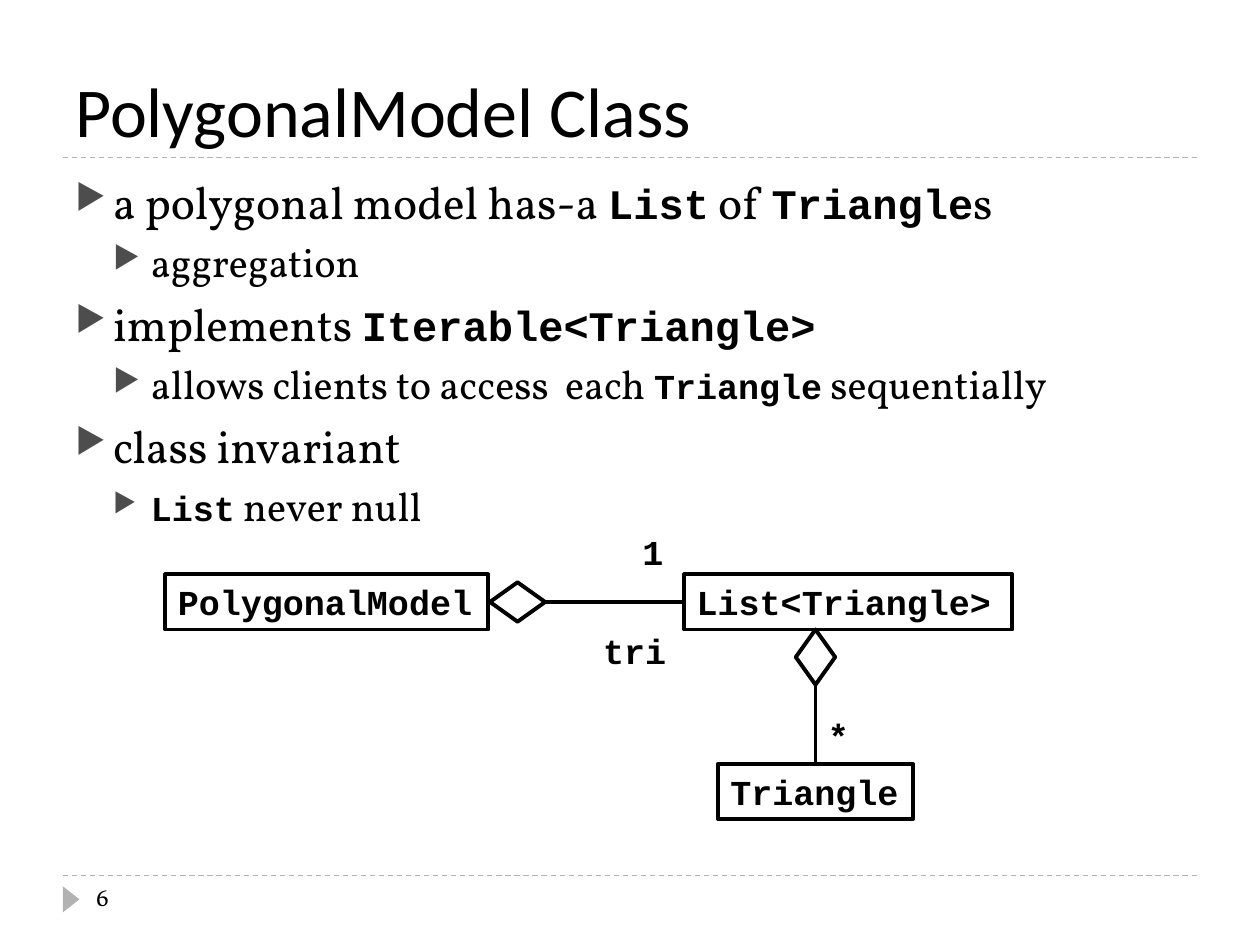
from lxml import etree
from pptx import Presentation
from pptx.dml.color import RGBColor
from pptx.enum import dml, shapes, text
from pptx.oxml import ns
from pptx.util import Pt

BLACK, GREY, DARK = "000000", "B2B2B2", "4D4D4D"
BODY, CODE = "Vollkorn", "Courier New"
LEVELS = [
    dict(size=26, code_size=24, before=6, indent=21.6),
    dict(size=23, code_size=20, before=5, indent=43.2),
]
BULLETS = [
    (0, "a polygonal model has-a `List` of `Triangle`s"),
    (1, "aggregation"),
    (0, "implements `Iterable<Triangle>`"),
    (1, "allows clients to access  each `Triangle` sequentially"),
    (0, "class invariant"),
    (1, "`List` never null"),
]


def rgb(value):
    """Turn a hex string into a colour."""
    return RGBColor.from_string(value)


def add_run(p, words, size=20, font=BODY, bold=False, color=BLACK):
    """Append a formatted run to a paragraph."""
    r = p.add_run()
    r.text = words
    r.font.size, r.font.name, r.font.bold = Pt(size), font, bold
    r.font.color.rgb = rgb(color)


def add_text(slide, box, words, anchor=text.MSO_ANCHOR.TOP, wrap=True, **style):
    """Add a text box holding one paragraph."""
    tf = slide.shapes.add_textbox(*map(Pt, box)).text_frame
    tf.word_wrap, tf.vertical_anchor = wrap, anchor
    add_run(tf.paragraphs[0], words, **style)


def add_line(slide, start, end, color=BLACK, width=2.25, dash=None):
    """Draw a straight line without a shadow."""
    line = slide.shapes.add_connector(
        shapes.MSO_CONNECTOR.STRAIGHT, *map(Pt, start + end))
    line.line.color.rgb, line.line.width = rgb(color), Pt(width)
    line.line.dash_style = dash
    etree.SubElement(line._element.spPr, ns.qn("a:effectLst"))


def add_outline(slide, kind, box, fill=None, line=BLACK, rotation=0):
    """Add a preset shape with an optional fill and outline."""
    sp = slide.shapes.add_shape(kind, *map(Pt, box))
    sp.shadow.inherit = False
    sp.rotation = rotation
    if fill:
        sp.fill.solid()
        sp.fill.fore_color.rgb = rgb(fill)
    else:
        sp.fill.background()
    if line:
        sp.line.color.rgb, sp.line.width = rgb(line), Pt(2.25)
    else:
        sp.line.fill.background()
    return sp


def add_class(slide, box, name):
    """Add a class box with its name."""
    tf = add_outline(slide, shapes.MSO_SHAPE.RECTANGLE, box).text_frame
    tf.word_wrap, tf.vertical_anchor = False, text.MSO_ANCHOR.TOP
    p = tf.paragraphs[0]
    p.alignment = text.PP_ALIGN.LEFT
    add_run(p, name, font=CODE, bold=True)


def add_bullet(p, indent):
    """Give a paragraph a hanging triangle bullet."""
    pPr = p._p.get_or_add_pPr()
    pPr.set("marL", str(Pt(indent)))
    pPr.set("indent", str(Pt(-21.6)))
    color = etree.SubElement(pPr, ns.qn("a:buClr"))
    etree.SubElement(color, ns.qn("a:srgbClr"), val=DARK)
    etree.SubElement(pPr, ns.qn("a:buSzPct"), val="76000")
    etree.SubElement(pPr, ns.qn("a:buChar"), char="▶")


def title_region(slide, box, words):
    """Place the title above its dashed rule."""
    x, y, w, h = box
    add_line(slide, (x, y + h), (x + w, y + h), GREY, 0.75, dml.MSO_LINE.DASH)
    add_text(slide, box, words, text.MSO_ANCHOR.BOTTOM, size=40, font="Calibri")


def bullet_region(slide, box, items):
    """Place the two-level list, with code between backticks."""
    tf = slide.shapes.add_textbox(*map(Pt, box)).text_frame
    tf.word_wrap = True
    for i, (depth, words) in enumerate(items):
        p = tf.add_paragraph() if i else tf.paragraphs[0]
        level = LEVELS[depth]
        p.level, p.space_before = depth, Pt(level["before"])
        add_bullet(p, level["indent"])
        for j, part in enumerate(words.split("`")):
            if part and j % 2:
                add_run(p, part, level["code_size"], CODE, True)
            elif part:
                add_run(p, part, level["size"])


def diagram_region(slide, box):
    """Place the class diagram with its two aggregations."""
    x, y, w, h = box
    box_h, long, short = 31.5, 31.5, 22.5
    top = y + 28.5
    mid = top + box_h / 2
    model_w, list_w, triangle_w = 184.5, 187.5, 111.5
    list_x = x + w - list_w
    axis = list_x + 75
    bottom = y + h - box_h
    joint_x = x + model_w + 1
    joint_y = top + box_h

    add_class(slide, (x, top, model_w, box_h), "PolygonalModel")
    add_class(slide, (list_x, top, list_w, box_h), "List<Triangle>")
    add_class(slide, (axis - triangle_w / 2, bottom, triangle_w, box_h), "Triangle")

    for cx, cy, turn in ((joint_x + long / 2, mid, 0),
                         (axis, joint_y + long / 2, 90)):
        place = (cx - long / 2, cy - short / 2, long, short)
        add_outline(slide, shapes.MSO_SHAPE.DIAMOND, place, rotation=turn)
    add_line(slide, (joint_x + long, mid), (list_x, mid))
    add_line(slide, (axis, joint_y + long), (axis, bottom))

    for left, up, width, words in ((list_x - 31, y, 26.5, "1"),
                                   (list_x - 53.5, y + 56.5, 51, "tri"),
                                   (axis, bottom - box_h, 26.5, "*")):
        add_text(slide, (left, up, width, box_h), words, wrap=False,
                 font=CODE, bold=True)


def footer_region(slide, box, number):
    """Place the dashed rule, marker and slide number."""
    x, y, w, h = box
    add_line(slide, (x, y), (x + w, y), GREY, 0.75, dml.MSO_LINE.DASH)
    add_outline(slide, shapes.MSO_SHAPE.ISOSCELES_TRIANGLE,
                (x - 2.9, y + 8.9, 15, 9.5), GREY, None, 90)
    add_text(slide, (x + 12, y, 156, h), number, size=14)


def main():
    """Build and save the slide."""
    prs = Presentation()
    prs.slide_width, prs.slide_height = Pt(720), Pt(540)
    slide = prs.slides.add_slide(prs.slide_layouts[6])
    title_region(slide, (36, 12, 648, 78), "PolygonalModel Class")
    bullet_region(slide, (36, 96, 648, 389), BULLETS)
    diagram_region(slide, (94.5, 299.75, 484, 168.25))
    footer_region(slide, (36, 500.25, 648, 29), "6")
    prs.save("out.pptx")


if __name__ == "__main__":
    main()
